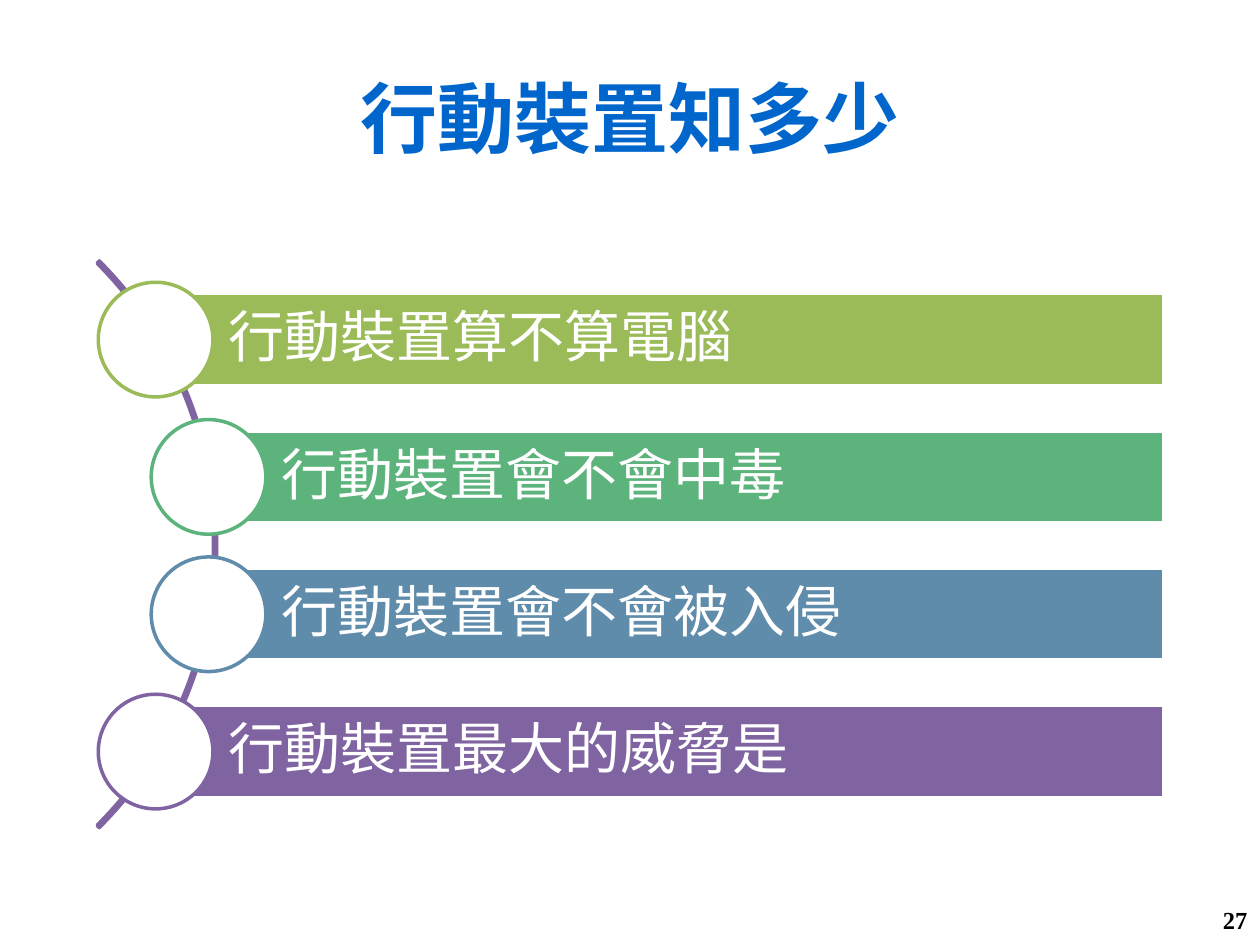
"""Build the slide on mobile device questions, on a grid of 100 columns by 75 rows."""
import dataclasses

import pptx
import pptx.dml.color
import pptx.enum.shapes
import pptx.enum.text
import pptx.util

SHAPE = pptx.enum.shapes.MSO_SHAPE
ALIGN = pptx.enum.text.PP_ALIGN
CELL = pptx.util.Inches(0.1)
FONT = "Times New Roman"
WHITE = "FFFFFF"
PURPLE = "8064A2"
TOP, PITCH, RIGHT = 26.95, 10.9, 92.35
BAR, DOT = 7.3, 9.1


@dataclasses.dataclass
class Box:
    """A place on the grid, in columns and rows."""
    left: float
    top: float
    width: float
    height: float

    def size(self) -> list[int]:
        """Give left, top, width and height as lengths."""
        return [round(n * CELL) for n in (self.left, self.top, self.width, self.height)]


@dataclasses.dataclass
class Topic:
    """A question, its colour and the column of its circle's centre."""
    text: str
    hue: str
    mid: float


TOPICS = [
    Topic("行動裝置算不算電腦", "9BBB59", 12.35),
    Topic("行動裝置會不會中毒", "5CB37C", 16.55),
    Topic("行動裝置會不會被入侵", "608CAB", 16.55),
    Topic("行動裝置最大的威脅是", PURPLE, 12.35),
]


def tint(code: str) -> pptx.dml.color.RGBColor:
    """Turn a hex string into a colour."""
    return pptx.dml.color.RGBColor.from_string(code)


def draw(slide, kind, box: Box, fill: str | None, line: str):
    """Add a flat shape with a two point outline."""
    shape = slide.shapes.add_shape(kind, *box.size())
    shape.shadow.inherit = False
    if fill:
        shape.fill.solid()
        shape.fill.fore_color.rgb = tint(fill)
    else:
        shape.fill.background()
    shape.line.color.rgb = tint(line)
    shape.line.width = pptx.util.Pt(2)
    return shape


def write(shape, text: str, size: int, hue: str, align, bold: bool = False):
    """Write one run in the middle of a shape's height."""
    frame = shape.text_frame
    frame.word_wrap = True
    frame.auto_size = pptx.enum.text.MSO_AUTO_SIZE.NONE
    frame.vertical_anchor = pptx.enum.text.MSO_ANCHOR.MIDDLE
    para = frame.paragraphs[0]
    para.alignment = align
    run = para.add_run()
    run.text = text
    run.font.name = FONT
    run.font.size = pptx.util.Pt(size)
    run.font.bold = bold
    run.font.color.rgb = tint(hue)
    return para


def add_topic(slide, topic: Topic, row: float) -> None:
    """Draw a bar with its question and the circle at its left end."""
    place = Box(topic.mid, row - BAR / 2, RIGHT - topic.mid, BAR)
    bar = draw(slide, SHAPE.RECTANGLE, place, topic.hue, WHITE)
    para = write(bar, topic.text, 32, WHITE, ALIGN.LEFT)
    para.line_spacing = 0.9
    frame = bar.text_frame
    frame.margin_left = round(5.8 * CELL)
    frame.margin_right = frame.margin_top = frame.margin_bottom = round(0.9 * CELL)
    ring = Box(topic.mid - DOT / 2, row - DOT / 2, DOT, DOT)
    draw(slide, SHAPE.OVAL, ring, WHITE, topic.hue)


def main() -> None:
    """Build and save the slide."""
    deck = pptx.Presentation()
    deck.slide_width, deck.slide_height = 100 * CELL, 75 * CELL
    slide = deck.slides.add_slide(deck.slide_layouts[5])

    title = slide.shapes.title
    title.left, title.top, title.width, title.height = Box(5, 3, 90, 12.5).size()
    write(title, "行動裝置知多少", 44, "0066CC", ALIGN.CENTER, True)

    arc = draw(slide, SHAPE.BLOCK_ARC, Box(-46.4, 11.4, 63.6, 63.6), None, PURPLE)
    for index, value in enumerate((189, 27, 0.004)):
        arc.adjustments[index] = value

    for index, topic in enumerate(TOPICS):
        add_topic(slide, topic, TOP + index * PITCH)

    number = slide.shapes.add_textbox(*Box(76.7, 71, 23.3, 4).size())
    write(number, "27", 14, "000000", ALIGN.RIGHT, True)
    deck.save("out.pptx")


if __name__ == "__main__":
    main()
